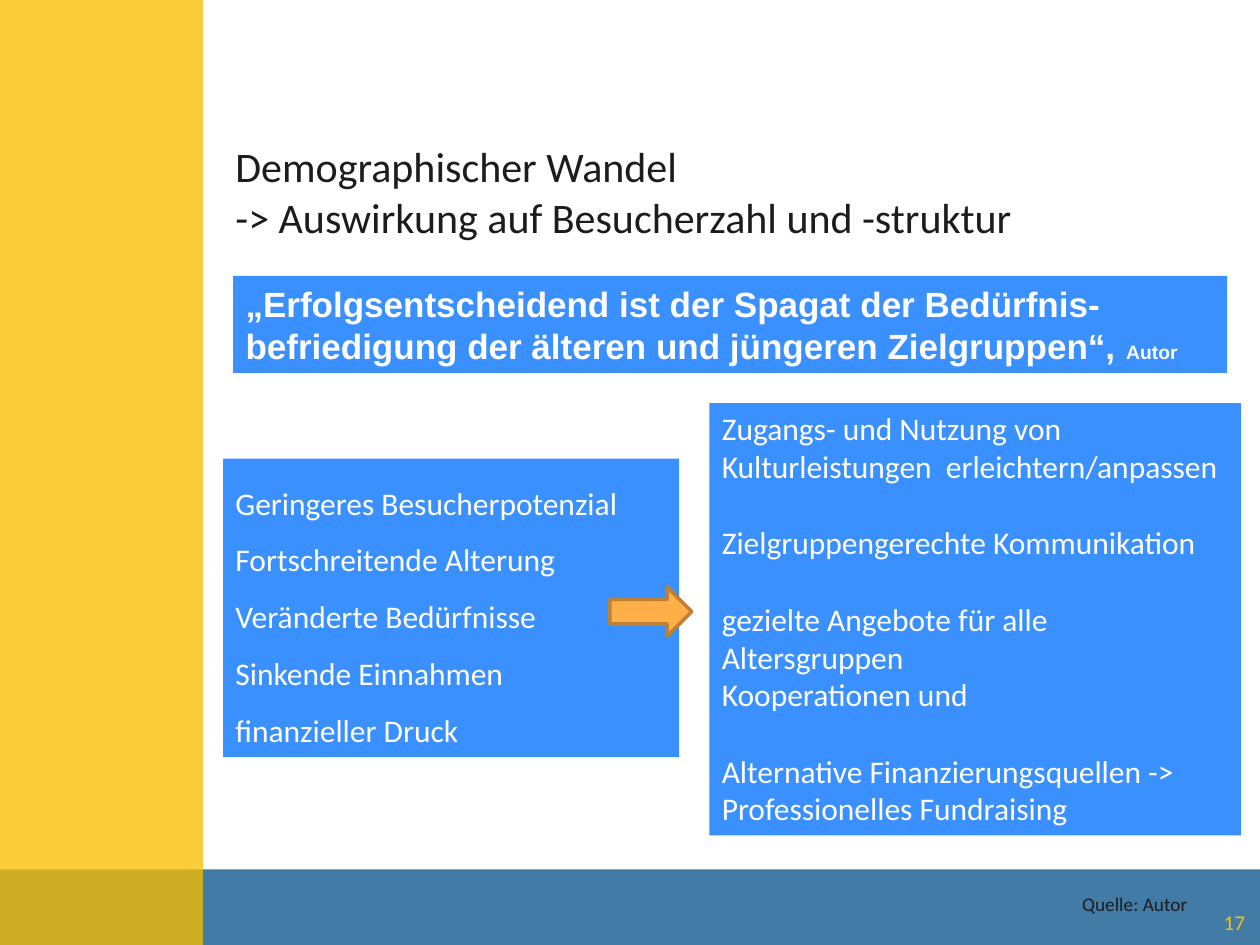
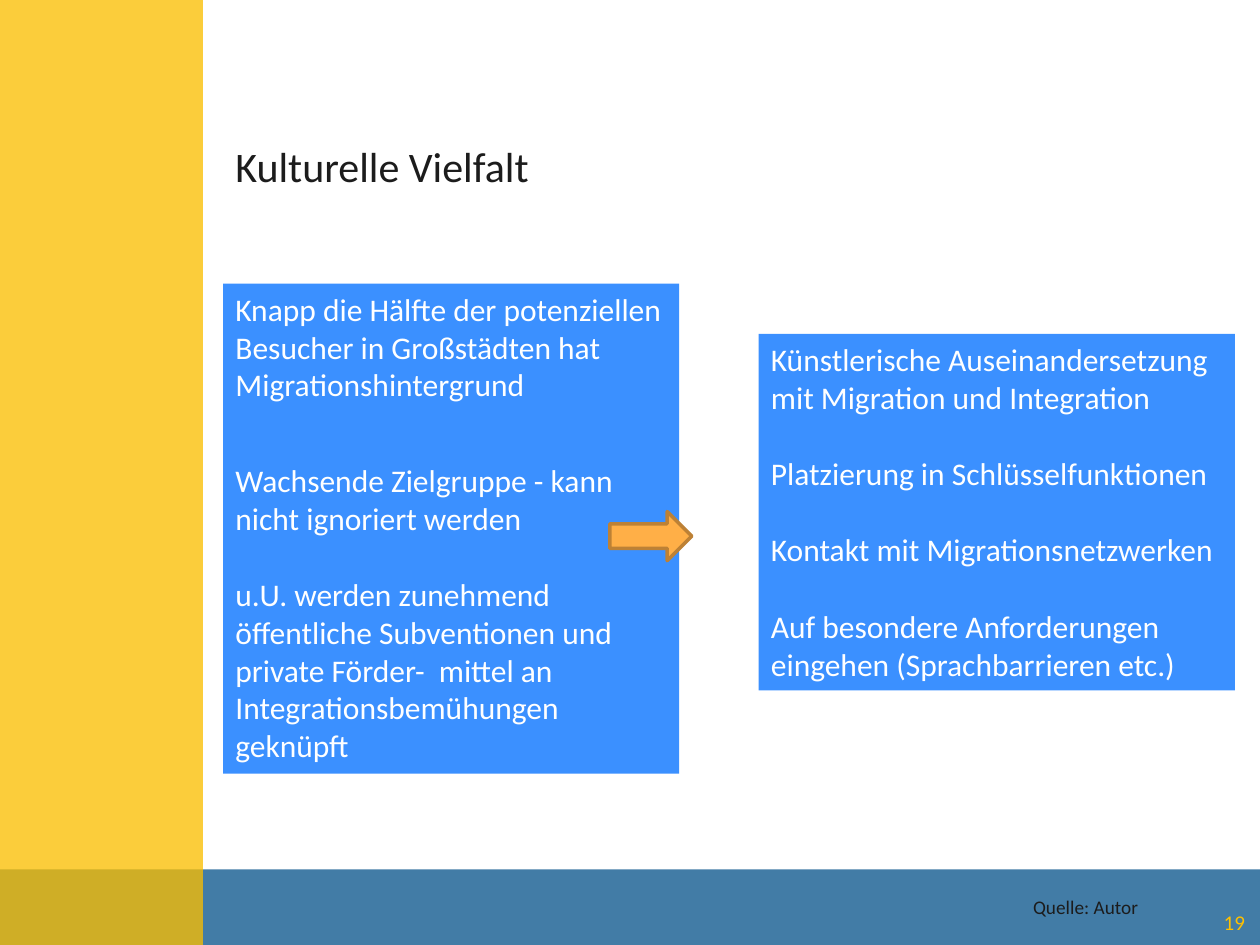
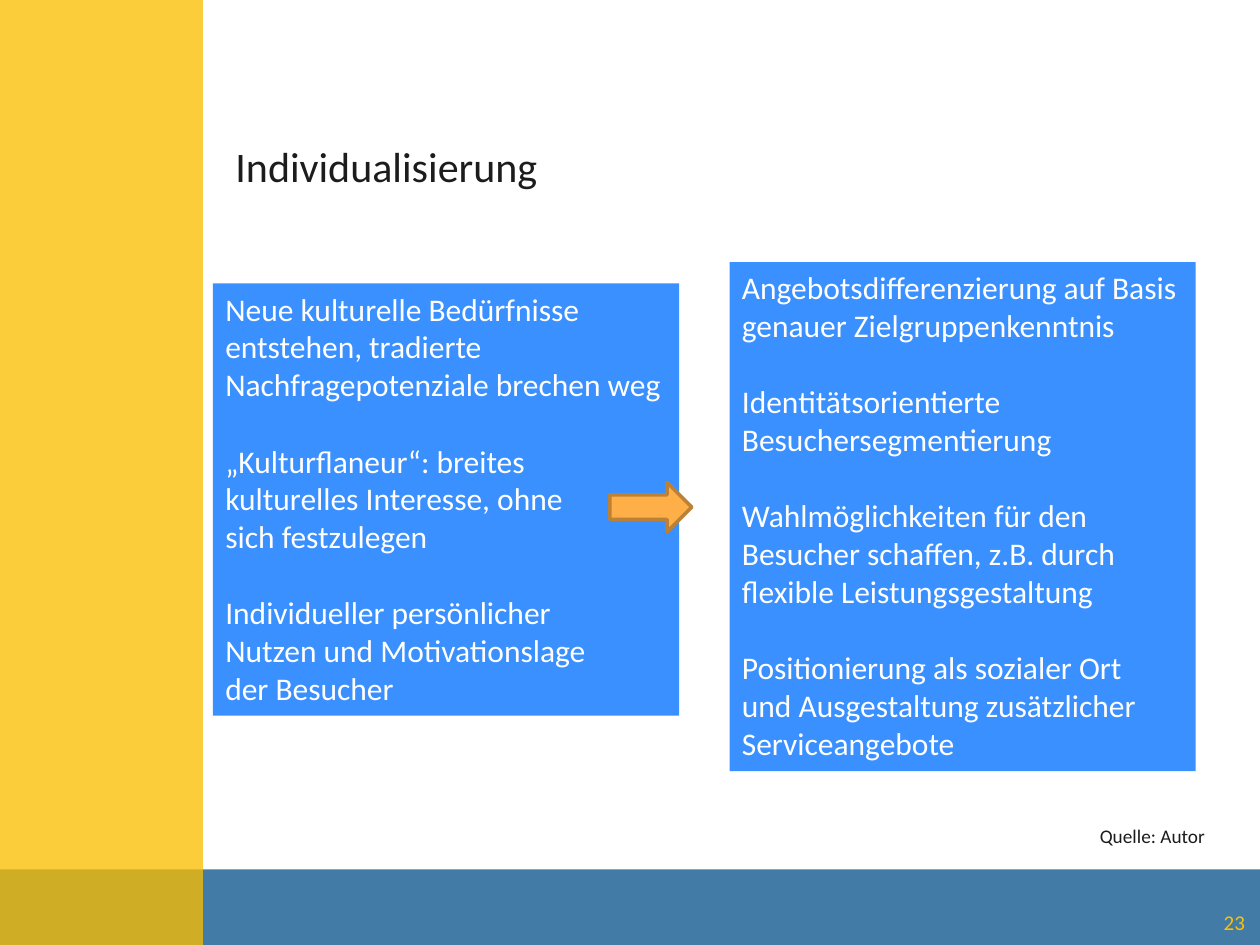
from itertools import repeat
from lxml.etree import SubElement
from pptx import Presentation
from pptx.dml.color import RGBColor
from pptx.enum.shapes import MSO_SHAPE
from pptx.enum.text import MSO_ANCHOR, MSO_AUTO_SIZE, PP_ALIGN
from pptx.oxml.ns import qn
from pptx.util import Inches, Pt

BLUE, GOLD, BOX = "0A558C", "FABE00", "3B90FF"
DARK, WHITE, NUMBER = "1C1C1C", "FFFFFF", "FFC000"
ARROW, EDGE = "FFAF47", "BD8135"
BODY, QUOTE = "Calibri", "Arial"
GAP = 22  # points, one line of body text
SOURCE = "Quelle: Autor"


def color(code):
    return RGBColor.from_string(code)


class Deck:
    def __init__(self):
        self.prs = Presentation()
        self.prs.slide_width, self.prs.slide_height = Inches(10), Inches(7.5)
        self.slide = None

    # Shared frame: bands, page number, title
    def page(self, number, *title):
        self.slide = self.prs.slides.add_slide(self.prs.slide_layouts[6])
        self.band(0, 6.9, 10, 0.6, BLUE)
        self.band(0, 0, 1.61, 7.5, GOLD)
        frame = self.label(7.65, 7.14, 2.33, 0.36, [number], 12, NUMBER)
        frame.word_wrap = True
        frame.auto_size = MSO_AUTO_SIZE.NONE
        frame.vertical_anchor = MSO_ANCHOR.MIDDLE
        frame.paragraphs[0].alignment = PP_ALIGN.RIGHT
        self.label(1.77, 1.07, 6.42, 0.4 * len(title) + 0.1, title, 24)

    def shape(self, kind, left, top, width, height, fill):
        item = self.slide.shapes.add_shape(
            kind, Inches(left), Inches(top), Inches(width), Inches(height))
        item.shadow.inherit = False
        item.fill.solid()
        item.fill.fore_color.rgb = color(fill)
        item.line.fill.background()
        return item

    def band(self, left, top, width, height, fill):
        item = self.shape(MSO_SHAPE.RECTANGLE, left, top, width, height, fill)
        tint = item.fill._xPr.find(".//" + qn("a:srgbClr"))
        SubElement(tint, qn("a:alpha")).set("val", "77000")

    def arrow(self, top):
        item = self.shape(MSO_SHAPE.RIGHT_ARROW, 4.84, top, 0.65, 0.39, ARROW)
        item.line.color.rgb = color(EDGE)
        item.line.width = Pt(2)

    def run(self, para, text, size, fill, face=BODY, bold=False):
        run = para.add_run()
        run.text = text
        font = run.font
        font.name, font.size, font.bold = face, Pt(size), bold
        font.color.rgb = color(fill)

    def line(self, frame, first):
        para = frame.paragraphs[0] if first else frame.add_paragraph()
        para.alignment = PP_ALIGN.LEFT
        return para

    # Unwrapped text on the slide
    def label(self, left, top, width, height, lines, size, fill=DARK):
        item = self.slide.shapes.add_textbox(
            Inches(left), Inches(top), Inches(width), Inches(height))
        frame = item.text_frame
        frame.word_wrap = False
        frame.auto_size = MSO_AUTO_SIZE.SHAPE_TO_FIT_TEXT
        for pos, text in enumerate(lines):
            self.run(self.line(frame, pos == 0), text, size, fill)
        return frame

    def source(self, left, top):
        self.label(left, top, 1.05, 0.29, [SOURCE], 11)

    def panel(self, left, top, width, height):
        item = self.shape(MSO_SHAPE.RECTANGLE, left, top, width, height, BOX)
        frame = item.text_frame
        frame.word_wrap = True
        frame.auto_size = MSO_AUTO_SIZE.SHAPE_TO_FIT_TEXT
        frame.vertical_anchor = MSO_ANCHOR.TOP
        return frame

    # Blue box: groups of lines, set apart by gaps
    def box(self, left, top, width, height, groups, gaps=None, pitch=None):
        frame = self.panel(left, top, width, height)
        gaps = iter(gaps or repeat(GAP))
        for row, group in enumerate(groups):
            for pos, text in enumerate(group):
                para = self.line(frame, row == pos == 0)
                if row and pos == 0:
                    para.space_before = Pt(next(gaps))
                if pitch:
                    para.line_spacing = pitch
                self.run(para, text, 18, WHITE)

    def quote(self, left, top, width, height, text, author):
        para = self.line(self.panel(left, top, width, height), True)
        self.run(para, text, 20, WHITE, QUOTE, True)
        self.run(para, author, 11, WHITE, QUOTE, True)


def main():
    deck = Deck()

    # Demographic change
    deck.page("17", "Demographischer Wandel",
              "-> Auswirkung auf Besucherzahl und -struktur")
    deck.source(8.49, 7.03)
    deck.box(1.77, 3.64, 3.62, 2.37, [
        ["Geringeres Besucherpotenzial", "Fortschreitende Alterung",
         "Veränderte Bedürfnisse", "Sinkende Einnahmen",
         "finanzieller Druck"]], pitch=1.5)
    deck.quote(1.85, 2.19, 7.89, 0.77,
               "„Erfolgsentscheidend ist der Spagat der Bedürfnis-befriedigung "
               "der älteren und jüngeren Zielgruppen“, ", "Autor")
    deck.box(5.63, 3.2, 4.22, 3.43, [
        ["Zugangs- und Nutzung von Kulturleistungen  erleichtern/anpassen"],
        ["Zielgruppengerechte Kommunikation"],
        ["gezielte Angebote für alle Altersgruppen", "Kooperationen und"],
        ["Alternative Finanzierungsquellen ->",
         "Professionelles Fundraising"]])
    deck.arrow(4.66)

    # Cultural diversity
    deck.page("19", "Kulturelle Vielfalt")
    deck.source(8.1, 7.06)
    deck.box(1.77, 2.25, 3.62, 3.89, [
        ["Knapp die Hälfte der potenziellen Besucher in Großstädten hat "
         "Migrationshintergrund"],
        ["Wachsende Zielgruppe - kann nicht ignoriert werden"],
        ["u.U. werden zunehmend öffentliche Subventionen und private "
         "Förder-  mittel an Integrationsbemühungen geknüpft"]],
        gaps=[1.5 * GAP, GAP])
    deck.box(6.02, 2.65, 3.78, 2.83, [
        ["Künstlerische Auseinandersetzung mit Migration und Integration"],
        ["Platzierung in Schlüsselfunktionen"],
        ["Kontakt mit Migrationsnetzwerken"],
        ["Auf besondere Anforderungen eingehen (Sprachbarrieren etc.)"]])
    deck.arrow(4.06)

    # Individualisation
    deck.page("23", "Individualisierung")
    deck.source(8.63, 6.49)
    deck.box(1.69, 2.25, 3.7, 3.43, [
        ["Neue kulturelle Bedürfnisse entstehen, tradierte "
         "Nachfragepotenziale brechen weg"],
        ["„Kulturflaneur“: breites", "kulturelles Interesse, ohne",
         "sich festzulegen"],
        ["Individueller persönlicher", "Nutzen und Motivationslage",
         "der Besucher"]])
    deck.box(5.79, 2.08, 3.7, 4.04, [
        ["Angebotsdifferenzierung auf Basis", "genauer Zielgruppenkenntnis"],
        ["Identitätsorientierte Besuchersegmentierung"],
        ["Wahlmöglichkeiten für den", "Besucher schaffen, z.B. durch",
         "flexible Leistungsgestaltung"],
        ["Positionierung als sozialer Ort", "und Ausgestaltung zusätzlicher",
         "Serviceangebote"]])
    deck.arrow(3.83)

    deck.prs.save("out.pptx")


if __name__ == "__main__":
    main()
